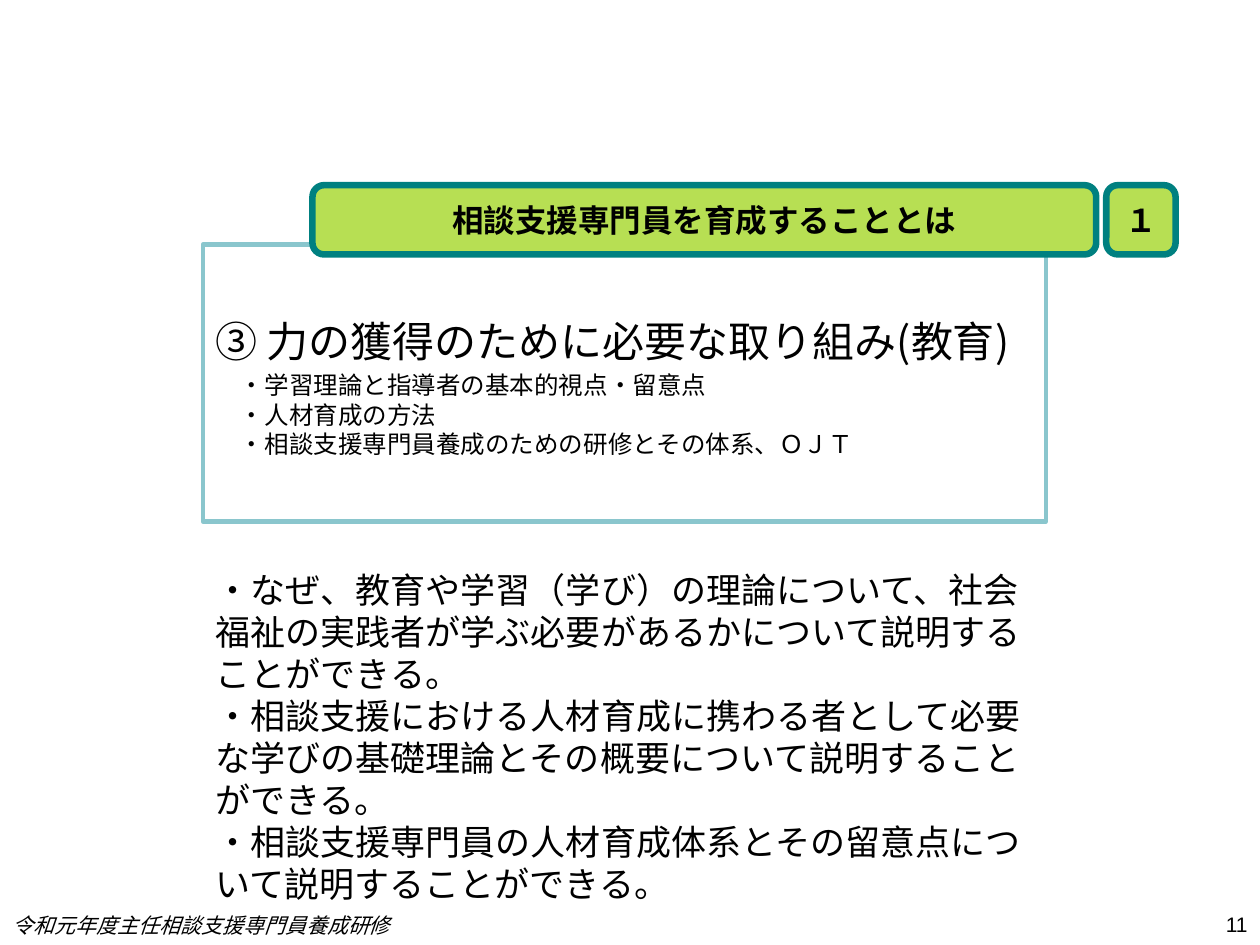
from dataclasses import dataclass

from lxml.etree import SubElement
from pptx import Presentation
from pptx.dml.color import RGBColor
from pptx.enum.shapes import MSO_SHAPE as Preset
from pptx.enum.text import MSO_ANCHOR as Anchor, MSO_AUTO_SIZE as AutoSize, PP_ALIGN as Align
from pptx.oxml.ns import qn
from pptx.util import Inches, Pt

WIDTH, HEIGHT = Inches(10), Inches(7.5)
COLORS = {"text": "000000", "frame": "8AC6CD", "badge": "B7DF53", "badge_edge": "008080"}
JAPANESE, LATIN = "Noto Sans CJK JP", "Arial"
LINE_RATIO = 1.2
TWO_CONTENT = 3


@dataclass(frozen=True)
class Area:
    """A rectangle in percent of the slide's width and height."""
    left: float
    top: float
    width: float
    height: float

    def box(self) -> tuple[int, int, int, int]:
        return (int(WIDTH * self.left / 100), int(HEIGHT * self.top / 100),
                int(WIDTH * self.width / 100), int(HEIGHT * self.height / 100))


@dataclass(frozen=True)
class Badge:
    label: str
    area: Area


@dataclass(frozen=True)
class FooterNote:
    text: str
    area: Area
    format: dict


FRAME = Area(16.1, 25.87, 66.9, 29.33)
HEADING = Area(16.1, 32.13, 71.7, 6.4)
TOPICS = Area(16.1, 38.27, 71.7, 11.33)
GOALS = Area(16.1, 59.07, 66.9, 28.27)

HEADING_TEXT = "③ 力の獲得のために必要な取り組み(教育)"
TOPIC_LINES = [
    "・学習理論と指導者の基本的視点・留意点",
    "・人材育成の方法",
    "・相談支援専門員養成のための研修とその体系、ＯＪＴ",
]
GOAL_LINES = [
    "・なぜ、教育や学習（学び）の理論について、社会福祉の実践者が学ぶ必要があるかについて説明することができる。",
    "・相談支援における人材育成に携わる者として必要な学びの基礎理論とその概要について説明することができる。",
    "・相談支援専門員の人材育成体系とその留意点について説明することができる。",
]
BADGES = [
    Badge("相談支援専門員を育成することとは", Area(24.8, 19.6, 62.2, 7.33)),
    Badge("１", Area(87.8, 19.6, 5.5, 7.33)),
]
FOOTER_NOTES = [
    FooterNote("11", Area(76.7, 95.73, 23.3, 4.13), {"align": Align.RIGHT, "font": LATIN}),
    FooterNote("令和元年度主任相談支援専門員養成研修", Area(0, 95.87, 33.9, 4.13), {"italic": True}),
]


def color(name: str) -> RGBColor:
    return RGBColor.from_string(COLORS[name])


def write(shape, lines: list[str], *, size: float, font: str = JAPANESE, bold: bool = False,
          italic: bool = False, align: Align = Align.LEFT, anchor: Anchor = Anchor.MIDDLE,
          fixed_lines: bool = False, indent: float = 0, inset_top: float = 0.05) -> None:
    """Fill a shape with unbulleted paragraphs; indent is in points."""
    frame = shape.text_frame
    frame.word_wrap = True
    frame.auto_size = AutoSize.NONE
    frame.vertical_anchor = anchor
    frame.margin_top = Inches(inset_top)
    frame.text = "\n".join(lines)
    for paragraph in frame.paragraphs:
        paragraph.alignment = align
        paragraph.space_before = paragraph.space_after = Pt(0)
        if fixed_lines:
            paragraph.line_spacing = Pt(size * LINE_RATIO)
        properties = paragraph._p.get_or_add_pPr()
        properties.set("marL", str(Pt(indent)))
        properties.set("indent", "0")
        SubElement(properties, qn("a:buNone"))
        for run in paragraph.runs:
            run.font.size = Pt(size)
            run.font.bold, run.font.italic = bold, italic
            run.font.color.rgb = color("text")
            run.font.name = font
            SubElement(run.font._element, qn("a:ea"), typeface=font)


def place(shape, area: Area):
    shape.left, shape.top, shape.width, shape.height = area.box()
    return shape


def add_outlined(slide, preset: Preset, area: Area, edge: str, weight: float,
                 fill: str | None = None):
    shape = slide.shapes.add_shape(preset, *area.box())
    shape.shadow.inherit = False
    shape.line.color.rgb = color(edge)
    shape.line.width = Pt(weight)
    if fill:
        shape.fill.solid()
        shape.fill.fore_color.rgb = color(fill)
    else:
        shape.fill.background()
    return shape


def add_badge(slide, badge: Badge) -> None:
    shape = add_outlined(slide, Preset.ROUNDED_RECTANGLE, badge.area, "badge_edge", 3.75, "badge")
    write(shape, [badge.label], size=18, bold=True, align=Align.CENTER)


def add_footer_note(slide, note: FooterNote) -> None:
    write(slide.shapes.add_textbox(*note.area.box()), [note.text], size=12, **note.format)


def main() -> None:
    deck = Presentation()
    deck.slide_width, deck.slide_height = WIDTH, HEIGHT
    slide = deck.slides.add_slide(deck.slide_layouts[TWO_CONTENT])
    heading, topics, goals = slide.placeholders

    add_outlined(slide, Preset.RECTANGLE, FRAME, "frame", 2.5)
    block = {"anchor": Anchor.TOP, "fixed_lines": True}
    write(place(heading, HEADING), [HEADING_TEXT], size=24, inset_top=0.09, **block)
    write(place(topics, TOPICS), TOPIC_LINES, size=14, indent=14, inset_top=0.07, **block)
    write(place(goals, GOALS), GOAL_LINES, size=20, inset_top=0.08, **block)
    for badge in BADGES:
        add_badge(slide, badge)
    for note in FOOTER_NOTES:
        add_footer_note(slide, note)

    deck.save("out.pptx")


if __name__ == "__main__":
    main()
